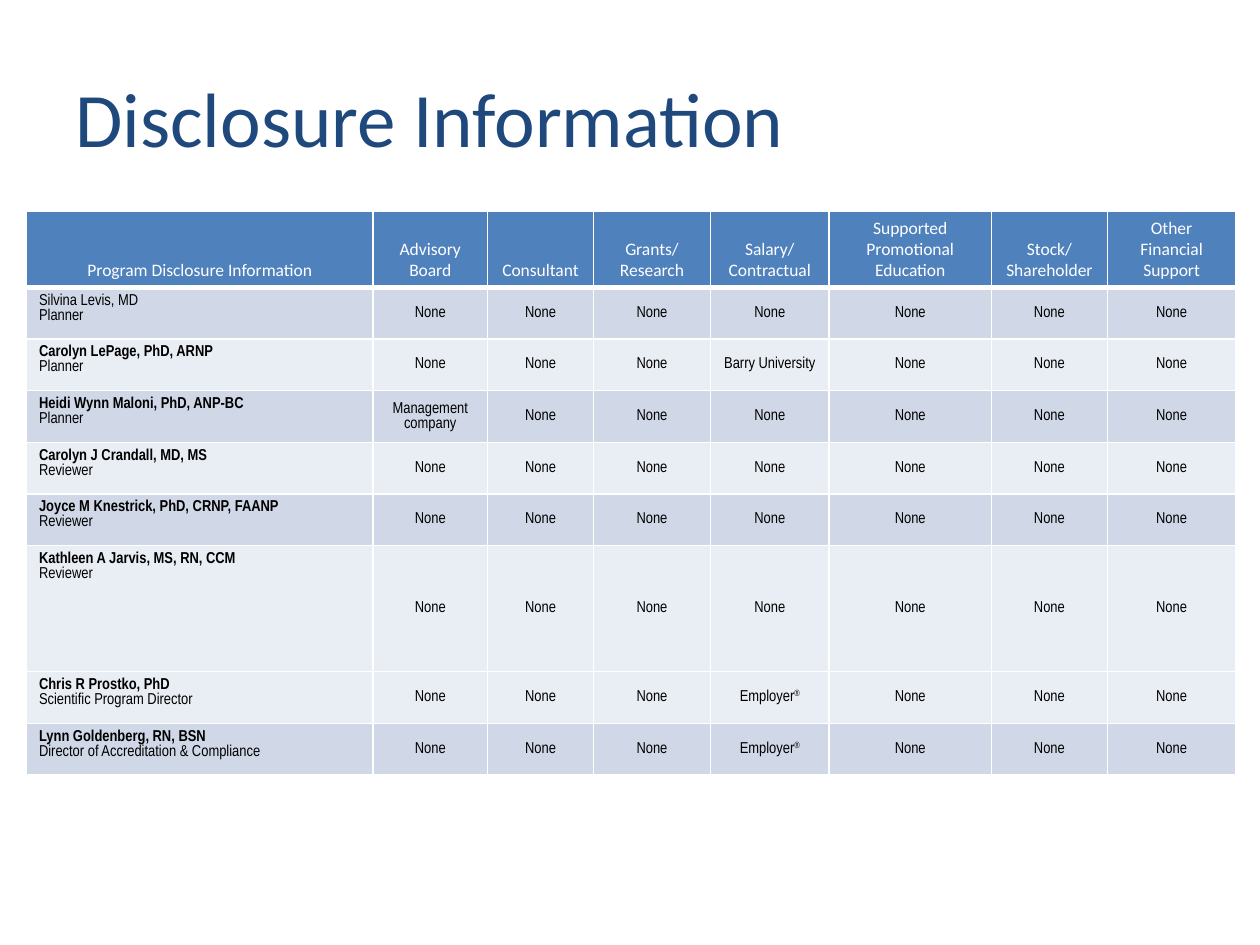
from dataclasses import dataclass, field

from lxml.etree import SubElement
from pptx import Presentation
from pptx.dml.color import RGBColor
from pptx.enum.text import MSO_ANCHOR as Anchor, PP_ALIGN as Align
from pptx.oxml.ns import qn
from pptx.util import Inches, Pt

WHITE, BLACK, NAVY, BLUE = "FFFFFF", "000000", "1F497D", "4F81BD"
DARK_BAND, LIGHT_BAND = "D0D8E8", "E9EDF4"
COLUMN_WIDTHS = [2.75, 0.91, 0.84, 0.93, 0.94, 1.29, 0.92, 1.02]
HEADERS = [
    "Program Disclosure Information", "Advisory Board", "Consultant",
    "Grants/\vResearch", "Salary/\vContractual",
    "Supported Promotional Education", "Stock/Shareholder",
    "Other Financial Support",
]
ADVISORY, SALARY = 1, 4


@dataclass
class Person:
    name: str
    role: str
    band: str
    disclosures: dict[int, str] = field(default_factory=dict)
    bold: bool = True
    height: float = 0.41


PEOPLE = [
    Person("Silvina Levis, MD", "Planner", DARK_BAND, bold=False),
    Person("Carolyn LePage, PhD, ARNP", "Planner", LIGHT_BAND, {SALARY: "Barry University"}),
    Person("Heidi Wynn Maloni, PhD, ANP-BC", "Planner", DARK_BAND, {ADVISORY: "Management company"}),
    Person("Carolyn J Crandall, MD, MS", "Reviewer", LIGHT_BAND),
    Person("Joyce M Knestrick, PhD, CRNP, FAANP", "Reviewer", DARK_BAND),
    Person("Kathleen A Jarvis, MS, RN, CCM", "Reviewer", LIGHT_BAND, height=1),
    Person("Chris R Prostko, PhD", "Scientific Program Director", LIGHT_BAND, {SALARY: "Employer®"}),
    Person("Lynn Goldenberg, RN, BSN", "Director of Accreditation & Compliance", DARK_BAND, {SALARY: "Employer®"}),
]


def color(value: str) -> RGBColor:
    return RGBColor.from_string(value)


def style_font(font, name: str, size: float, value: str, bold: bool = False) -> None:
    font.name, font.size, font.bold = name, Pt(size), bold
    font.color.rgb = color(value)


def style_text(text_frame, name: str, size: float, value: str, align: Align) -> None:
    for paragraph in text_frame.paragraphs:
        paragraph.alignment = align
        for run in paragraph.runs:
            style_font(run.font, name, size, value)


def set_borders(cell, top: float, bottom: float) -> None:
    properties = cell._tc.get_or_add_tcPr()
    for side, width in (("L", 1), ("R", 1), ("T", top), ("B", bottom)):
        line = SubElement(properties, qn(f"a:ln{side}"), w=str(Pt(width)))
        fill = SubElement(line, qn("a:solidFill"))
        SubElement(fill, qn("a:srgbClr"), val=WHITE)


def style_cell(cell, fill: str, anchor: Anchor, top: float = 1, bottom: float = 1) -> None:
    set_borders(cell, top, bottom)
    cell.fill.solid()
    cell.fill.fore_color.rgb = color(fill)
    cell.vertical_anchor = anchor


def fill_disclosure(cell, text: str) -> None:
    name, mark, _ = text.partition("®")
    cell.text_frame.text = name
    if mark:
        run = cell.text_frame.paragraphs[0].add_run()
        run.text = mark
        run.font._element.set("baseline", "30000")
    style_text(cell.text_frame, "Arial Narrow", 9, BLACK, Align.CENTER)


def add_title(slide) -> None:
    title = slide.shapes.add_textbox(Inches(0.5), Inches(0.3), Inches(9), Inches(1.25))
    text_frame = title.text_frame
    text_frame.word_wrap = True
    text_frame.vertical_anchor = Anchor.MIDDLE
    text_frame.text = "Disclosure Information"
    style_text(text_frame, "Calibri", 44, NAVY, Align.LEFT)


def add_disclosure_table(slide) -> None:
    heights = [0.6] + [person.height for person in PEOPLE]
    table = slide.shapes.add_table(
        len(heights), len(HEADERS), Inches(0.21), Inches(1.68),
        Inches(sum(COLUMN_WIDTHS)), Inches(sum(heights)),
    ).table
    table.first_row = table.horz_banding = False
    for column, width in zip(table.columns, COLUMN_WIDTHS):
        column.width = Inches(width)
    for row, height in zip(table.rows, heights):
        row.height = Inches(height)

    for index, header in enumerate(HEADERS):
        cell = table.cell(0, index)
        cell.text_frame.text = header
        style_cell(cell, BLUE, Anchor.BOTTOM, bottom=3)
        style_text(cell.text_frame, "Calibri", 10, WHITE, Align.CENTER)

    for row_index, person in enumerate(PEOPLE, start=1):
        top = 3 if row_index == 1 else 1
        cell = table.cell(row_index, 0)
        cell.text_frame.text = f"{person.name}\n{person.role}"
        style_cell(cell, person.band, Anchor.TOP, top)
        style_text(cell.text_frame, "Arial Narrow", 9, BLACK, Align.LEFT)
        cell.text_frame.paragraphs[0].runs[0].font.bold = person.bold
        for index in range(1, len(HEADERS)):
            cell = table.cell(row_index, index)
            fill_disclosure(cell, person.disclosures.get(index, "None"))
            style_cell(cell, person.band, Anchor.MIDDLE, top)


def main() -> None:
    """Build the disclosure slide and save it."""
    presentation = Presentation()
    presentation.slide_width, presentation.slide_height = Inches(10), Inches(7.5)
    slide = presentation.slides.add_slide(presentation.slide_layouts[6])
    add_title(slide)
    add_disclosure_table(slide)
    presentation.save("out.pptx")


if __name__ == "__main__":
    main()
